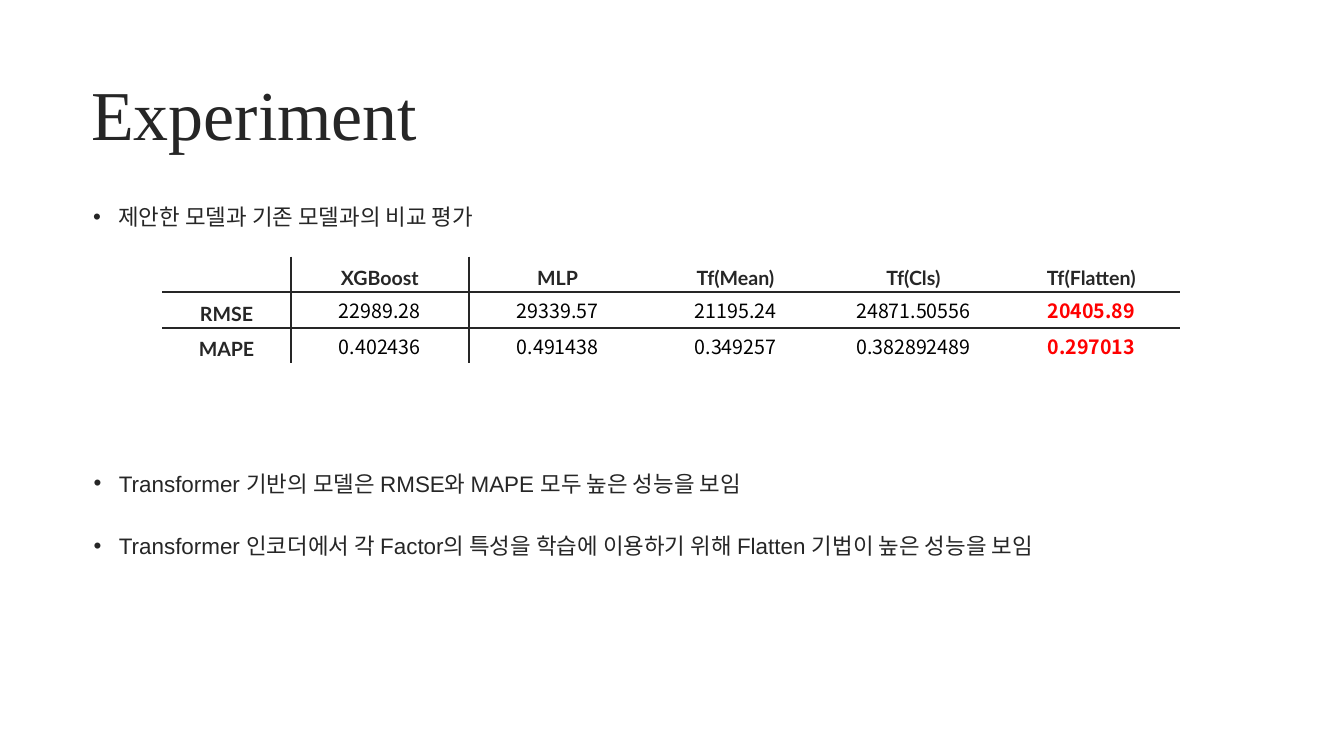
from dataclasses import dataclass

from lxml import etree
from pptx import Presentation
from pptx import util as u
from pptx.dml.color import RGBColor
from pptx.enum import text
from pptx.oxml import ns

INK = RGBColor(0x26, 0x26, 0x26)
BLACK = RGBColor(0, 0, 0)
RED = RGBColor(0xFF, 0, 0)
HANGUL_FONT = "Noto Sans CJK KR"
PLAIN_TABLE = "{2D5ABB26-0587-4C30-8999-92F81FD0307C}"


@dataclass(frozen=True)
class Style:
    font: str
    size: int
    color: RGBColor
    bold: bool = False


@dataclass(frozen=True)
class BulletList:
    left: float
    top: float
    width: float
    height: float
    items: tuple[str, ...]


TITLE = Style("Times New Roman", 100, INK)
BODY = Style("Arial", 32, INK)
HEADING = Style("Lato", 28, INK, True)
NUMBER = Style(HANGUL_FONT, 28, BLACK)
BEST = Style(HANGUL_FONT, 28, RED, True)

RESULTS = (
    ("", "XGBoost", "MLP", "Tf(Mean)", "Tf(Cls)", "Tf(Flatten)"),
    ("RMSE", "22989.28", "29339.57", "21195.24", "24871.50556", "20405.89"),
    ("MAPE", "0.402436", "0.491438", "0.349257", "0.382892489", "0.297013"),
)
COLUMN_WIDTHS = (2.55,) + (3.53,) * 5
ROW_HEIGHT = 0.66
BEST_COLUMN = 5
RULED_ROWS = (0, 1)
RULED_COLUMNS = (0, 1)

BULLET_LISTS = (
    BulletList(1.75, 3.82, 23.16, 0.73, ("제안한 모델과 기존 모델과의 비교 평가",)),
    BulletList(1.76, 9.11, 23.15, 2.13, (
        "Transformer 기반의 모델은 RMSE와 MAPE 모두 높은 성능을 보임",
        "Transformer 인코더에서 각 Factor의 특성을 학습에 이용하기 위해 Flatten 기법이 높은 성능을 보임",
    )),
)


def add_span(para, words: str, style: Style) -> None:
    span = para.add_run()
    span.text = words
    span.font.name = style.font
    span.font.size = u.Pt(style.size)
    span.font.bold = style.bold
    span.font.color.rgb = style.color
    east_asian = etree.SubElement(span.font._element, ns.qn("a:ea"))
    east_asian.set("typeface", HANGUL_FONT)


def add_box(page, left: float, top: float, width: float, height: float):
    box = page.shapes.add_textbox(
        u.Inches(left), u.Inches(top), u.Inches(width), u.Inches(height))
    box.text_frame.word_wrap = True
    return box.text_frame


def add_title(page, words: str) -> None:
    frame = add_box(page, 1.75, 1.2, 8.93, 2.08)
    frame.vertical_anchor = text.MSO_ANCHOR.MIDDLE
    frame.margin_left = frame.margin_right = u.Inches(0.06)
    frame.margin_top = frame.margin_bottom = u.Inches(0.06)
    add_span(frame.paragraphs[0], words, TITLE)


def add_bullets(page, bullets: BulletList) -> None:
    frame = add_box(page, bullets.left, bullets.top, bullets.width, bullets.height)
    for index, item in enumerate(bullets.items):
        para = frame.add_paragraph() if index else frame.paragraphs[0]
        para.line_spacing = 1.3
        if index:
            para.space_before = u.Pt(40)
        properties = para._p.get_or_add_pPr()
        properties.set("marL", str(u.Inches(0.5)))
        properties.set("indent", str(-u.Inches(0.5)))
        etree.SubElement(properties, ns.qn("a:buFont")).set("typeface", "Arial")
        etree.SubElement(properties, ns.qn("a:buChar")).set("char", "•")
        add_span(para, item, BODY)


def rule_cell(cell, row: int, column: int) -> None:
    edges = {
        "L": column - 1 in RULED_COLUMNS,
        "R": column in RULED_COLUMNS,
        "T": row - 1 in RULED_ROWS,
        "B": row in RULED_ROWS,
    }
    properties = cell._tc.get_or_add_tcPr()
    for side, ruled in edges.items():
        line = etree.SubElement(properties, ns.qn(f"a:ln{side}"))
        if ruled:
            line.set("w", str(u.Pt(3)))
            fill = etree.SubElement(line, ns.qn("a:solidFill"))
            etree.SubElement(fill, ns.qn("a:srgbClr")).set("val", str(INK))
        else:
            etree.SubElement(line, ns.qn("a:noFill"))
    cell.fill.background()


def fill_cell(cell, words: str, row: int, column: int) -> None:
    rule_cell(cell, row, column)
    if not words:
        return
    cell.vertical_anchor = text.MSO_ANCHOR.MIDDLE
    para = cell.text_frame.paragraphs[0]
    para.alignment = text.PP_ALIGN.CENTER
    if row == 0 or column == 0:
        para.line_spacing = 1.3
        add_span(para, words, HEADING)
        return
    cell.margin_left = cell.margin_right = cell.margin_top = u.Inches(0.01)
    cell.margin_bottom = 0
    add_span(para, words, BEST if column == BEST_COLUMN else NUMBER)


def add_results(page) -> None:
    frame = page.shapes.add_table(
        len(RESULTS), len(COLUMN_WIDTHS), u.Inches(3.22), u.Inches(5.09),
        u.Inches(sum(COLUMN_WIDTHS)), u.Inches(ROW_HEIGHT * len(RESULTS)))
    table = frame.table
    table.first_row = table.horz_banding = False
    table._tbl.tblPr.find(ns.qn("a:tableStyleId")).text = PLAIN_TABLE
    for column, width in zip(table.columns, COLUMN_WIDTHS):
        column.width = u.Inches(width)
    for row, values in enumerate(RESULTS):
        table.rows[row].height = u.Inches(ROW_HEIGHT)
        for column, words in enumerate(values):
            fill_cell(table.cell(row, column), words, row, column)


def main() -> None:
    deck = Presentation()
    deck.slide_width = u.Inches(26.67)
    deck.slide_height = u.Inches(15)
    page = deck.slides.add_slide(deck.slide_layouts[6])
    add_title(page, "Experiment")
    add_results(page)
    for bullets in BULLET_LISTS:
        add_bullets(page, bullets)
    deck.save("out.pptx")


if __name__ == "__main__":
    main()
